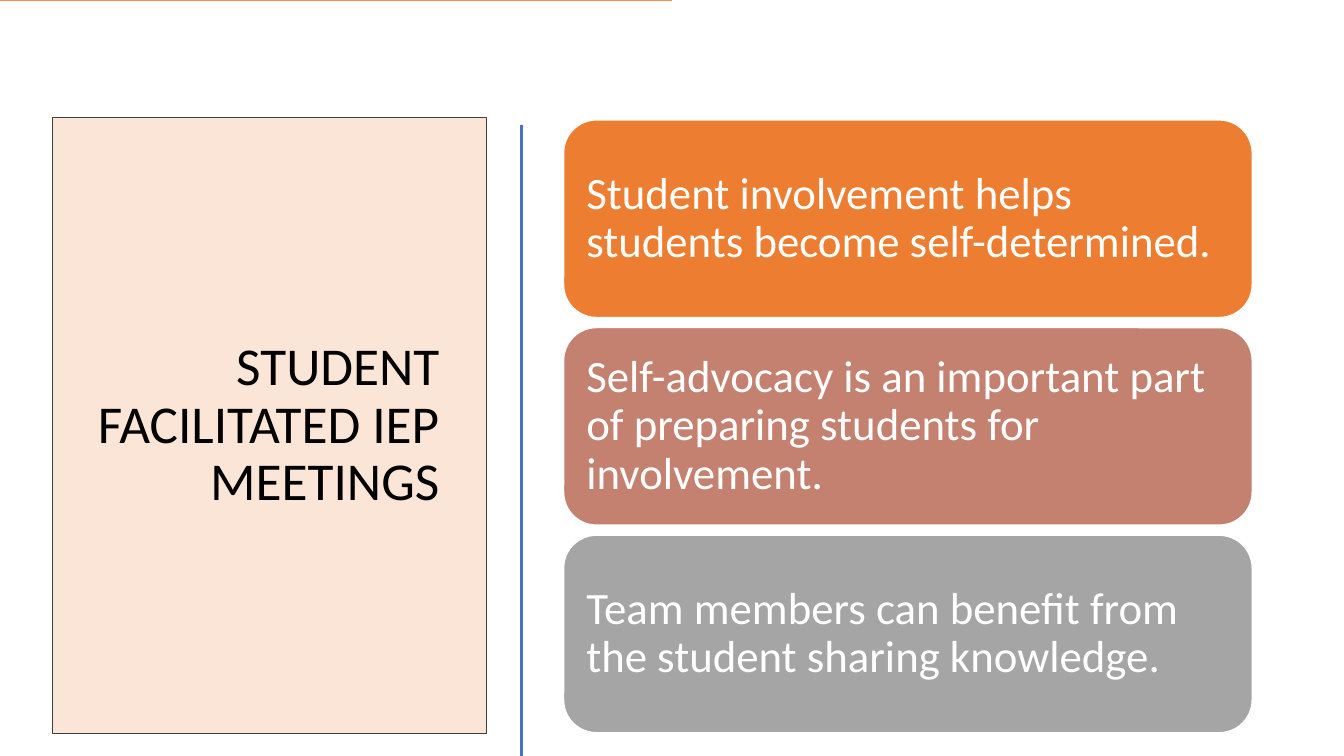
from pptx import Presentation
from pptx.dml.color import RGBColor
from pptx.enum import shapes, text
from pptx.oxml.ns import qn
from pptx import util as u
from lxml import etree

ORANGE = RGBColor(0xED, 0x7D, 0x31)
ROSE = RGBColor(0xC4, 0x81, 0x70)
GRAY = RGBColor(0xA5, 0xA5, 0xA5)
PEACH = RGBColor(0xFB, 0xE5, 0xD6)
CHARCOAL = RGBColor(0x40, 0x40, 0x40)
BLUE = RGBColor(0x44, 0x72, 0xC4)
WHITE = RGBColor(0xFF, 0xFF, 0xFF)
BLACK = RGBColor(0, 0, 0)

HEADING = "STUDENT FACILITATED IEP MEETINGS"
POINTS = [
    ("Student involvement helps students become self-determined.", ORANGE),
    ("Self-advocacy is an important part of preparing students for involvement.", ROSE),
    ("Team members can benefit from the student sharing knowledge.", GRAY),
]

WIDTH, HEIGHT = 13.33, 7.5
STRIPE = 0.01
HEADING_BOX = (0.52, 1.17, 4.31, 6.11)
DIVIDER_X, DIVIDER_TOP = 5.17, 1.24
POINT_LEFT, POINT_TOP, POINT_WIDTH, POINT_HEIGHT = 5.59, 1.19, 6.83, 1.96
POINT_PITCH = 2.06

deck = Presentation()
deck.slide_width, deck.slide_height = u.Inches(WIDTH), u.Inches(HEIGHT)
slide = deck.slides.add_slide(deck.slide_layouts[6])


def add_panel(kind, box, fill, line=None, line_width=1):
    panel = slide.shapes.add_shape(kind, *(u.Inches(length) for length in box))
    panel.shadow.inherit = False
    panel.fill.solid()
    panel.fill.fore_color.rgb = fill
    if line is None:
        panel.line.fill.background()
    else:
        panel.line.color.rgb = line
        panel.line.width = u.Pt(line_width)
    return panel


def write(panel, words, size, color, align, insets):
    frame = panel.text_frame
    frame.word_wrap = True
    frame.vertical_anchor = text.MSO_ANCHOR.MIDDLE
    (frame.margin_left, frame.margin_top,
     frame.margin_right, frame.margin_bottom) = (u.Inches(inset) for inset in insets)
    paragraph = frame.paragraphs[0]
    paragraph.alignment = align
    paragraph.line_spacing = 0.9
    run = paragraph.add_run()
    run.text = words
    run.font.name = "Calibri"
    run.font.size = u.Pt(size)
    run.font.color.rgb = color


RECTANGLE = shapes.MSO_SHAPE.RECTANGLE
add_panel(RECTANGLE, (0, 0, WIDTH / 2, HEIGHT), ORANGE)
add_panel(RECTANGLE, (0, STRIPE, WIDTH, HEIGHT - STRIPE), WHITE)

heading = add_panel(RECTANGLE, HEADING_BOX, PEACH, CHARCOAL, 0.75)
write(heading, HEADING, 38, BLACK, text.PP_ALIGN.RIGHT, (0.4, 0.05, 0.47, 0.05))

divider = slide.shapes.add_connector(
    shapes.MSO_CONNECTOR.STRAIGHT,
    u.Inches(DIVIDER_X), u.Inches(DIVIDER_TOP), u.Inches(DIVIDER_X), u.Inches(HEIGHT))
divider.line.color.rgb = BLUE
divider.line.width = u.Pt(2)
etree.SubElement(divider._element.spPr, qn("a:effectLst"))

for row, (words, fill) in enumerate(POINTS):
    box = (POINT_LEFT, POINT_TOP + row * POINT_PITCH, POINT_WIDTH, POINT_HEIGHT)
    point = add_panel(shapes.MSO_SHAPE.ROUNDED_RECTANGLE, box, fill, WHITE)
    write(point, words, 32, WHITE, text.PP_ALIGN.LEFT, (0.13,) * 4)

deck.save("out.pptx")
